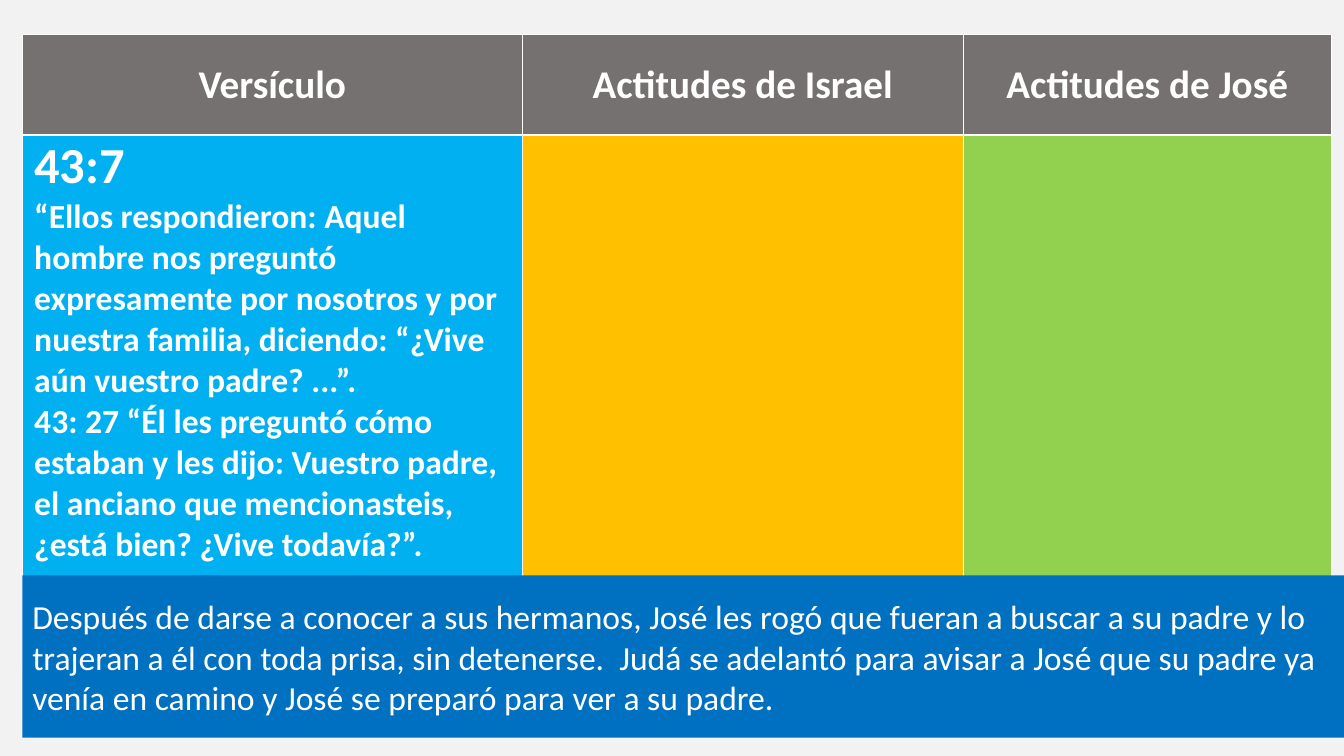
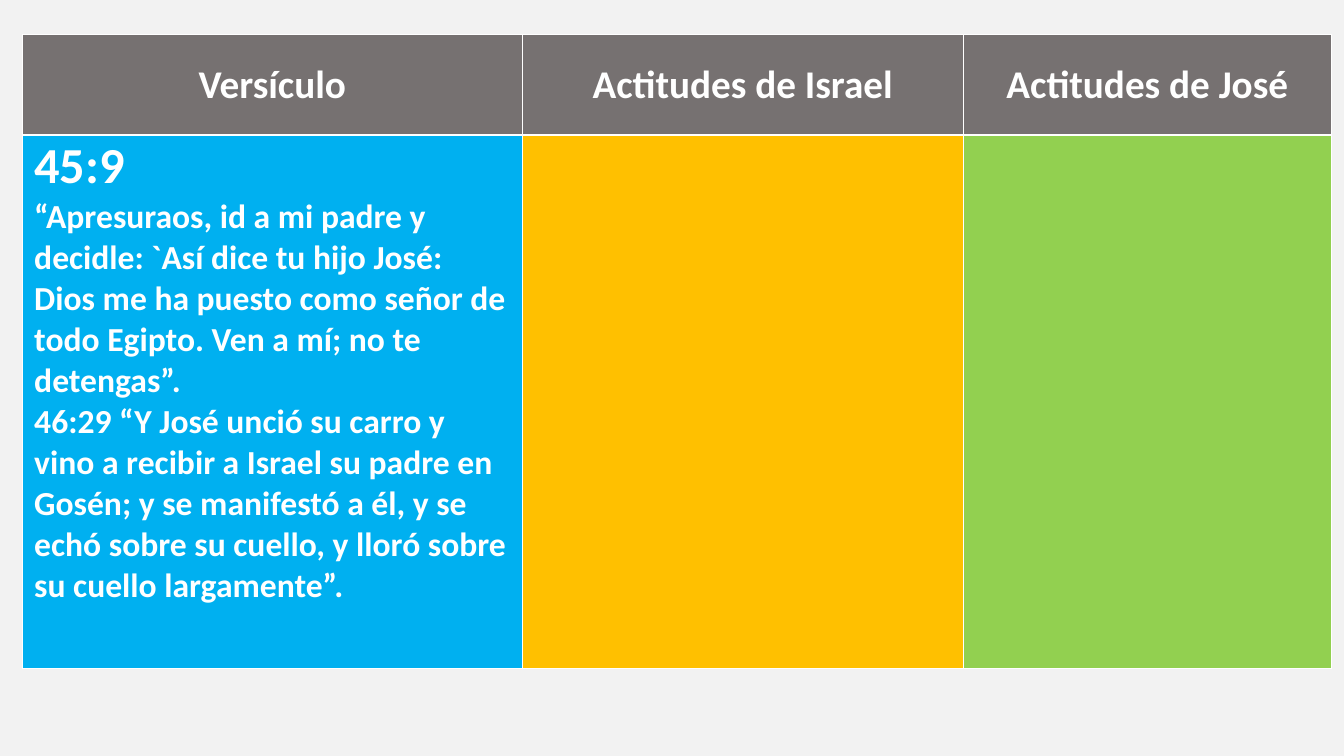
from pptx import Presentation
from pptx.dml.color import RGBColor
from pptx.enum.shapes import MSO_SHAPE
from pptx.enum.text import MSO_ANCHOR, PP_ALIGN
from pptx.util import Pt

WIDTH, HEIGHT = 960, 540
LEFT, TOP = 16, 24.5
COLS = (357, 315, 263)
ROWS = (72, 381)
HEADS = ("Versículo", "Actitudes de Israel", "Actitudes de José")

VERSES = (
    ("43:7",
     "“Ellos respondieron: Aquel hombre nos preguntó expresamente por nosotros "
     "y por nuestra familia, diciendo: “¿Vive aún vuestro padre? ...”.",
     "43: 27 “Él les preguntó cómo estaban y les dijo: Vuestro padre, el anciano "
     "que mencionasteis, ¿está bien? ¿Vive todavía?”."),
    ("45:9",
     "“Apresuraos, id a mi padre y decidle: `Así dice tu hijo José: Dios me ha "
     "puesto como señor de todo Egipto. Ven a mí; no te detengas”.",
     "46:29 “Y José unció su carro y vino a recibir a Israel su padre en Gosén; "
     "y se manifestó a él, y se echó sobre su cuello, y lloró sobre su cuello "
     "largamente”."),
)
NOTE = (
    "Después de darse a conocer a sus hermanos, José les rogó que fueran a buscar "
    "a su padre y lo trajeran a él con toda prisa, sin detenerse.  Judá se adelantó "
    "para avisar a José que su padre ya venía en camino y José se preparó para ver "
    "a su padre."
)


def paint(fill, color):
    fill.solid()
    fill.fore_color.rgb = RGBColor.from_string(color)


class Deck:
    FONT = "Calibri"
    BACK, INK = "F2F2F2", "FFFFFF"
    HEAD, BAND = "767171", "0070C0"
    BODY = ("00B0F0", "FFC000", "92D050")

    def __init__(self):
        self.prs = Presentation()
        self.prs.slide_width, self.prs.slide_height = Pt(WIDTH), Pt(HEIGHT)

    def page(self):
        self.slide = self.prs.slides.add_slide(self.prs.slide_layouts[6])
        paint(self.slide.background.fill, self.BACK)

    def style(self, para, size, bold=False, align=PP_ALIGN.LEFT):
        para.alignment = align
        for run in para.runs:
            font = run.font
            font.name, font.size, font.bold = self.FONT, Pt(size), bold
            font.color.rgb = RGBColor.from_string(self.INK)

    def cell(self, cell, color):
        """Set the fill and margins of a table cell."""
        paint(cell.fill, color)
        cell.margin_left = cell.margin_right = Pt(8.5)
        cell.margin_top = cell.margin_bottom = 0

    def table(self, verse):
        grid = self.slide.shapes.add_table(
            len(ROWS), len(COLS), Pt(LEFT), Pt(TOP), Pt(sum(COLS)), Pt(sum(ROWS))).table
        grid.horz_banding = False
        for row, high in zip(grid.rows, ROWS):
            row.height = Pt(high)
        for i, (wide, head, color) in enumerate(zip(COLS, HEADS, self.BODY)):
            grid.columns[i].width = Pt(wide)
            top = grid.cell(0, i)
            self.cell(top, self.HEAD)
            top.vertical_anchor = MSO_ANCHOR.MIDDLE
            top.text_frame.text = head
            self.style(top.text_frame.paragraphs[0], 28, True, PP_ALIGN.CENTER)
            self.cell(grid.cell(1, i), color)
        frame = grid.cell(1, 0).text_frame
        frame.text = "\n".join(verse)
        for para, size in zip(frame.paragraphs, (36, 24, 24)):
            self.style(para, size, True)

    def band(self, text, top, high):
        """Add a filled strip of text that runs to the right edge."""
        box = self.slide.shapes.add_shape(
            MSO_SHAPE.RECTANGLE, Pt(LEFT), Pt(top), Pt(WIDTH - LEFT), Pt(high))
        box.shadow.inherit = False
        paint(box.fill, self.BAND)
        box.line.fill.background()
        frame = box.text_frame
        frame.word_wrap = True
        frame.vertical_anchor = MSO_ANCHOR.MIDDLE
        frame.text = text
        self.style(frame.paragraphs[0], 24)


def main():
    deck = Deck()
    for verse, note in zip(VERSES, (NOTE, None)):
        deck.page()
        deck.table(verse)
        if note:
            deck.band(note, 411, 116)
    deck.prs.save("out.pptx")


if __name__ == "__main__":
    main()
